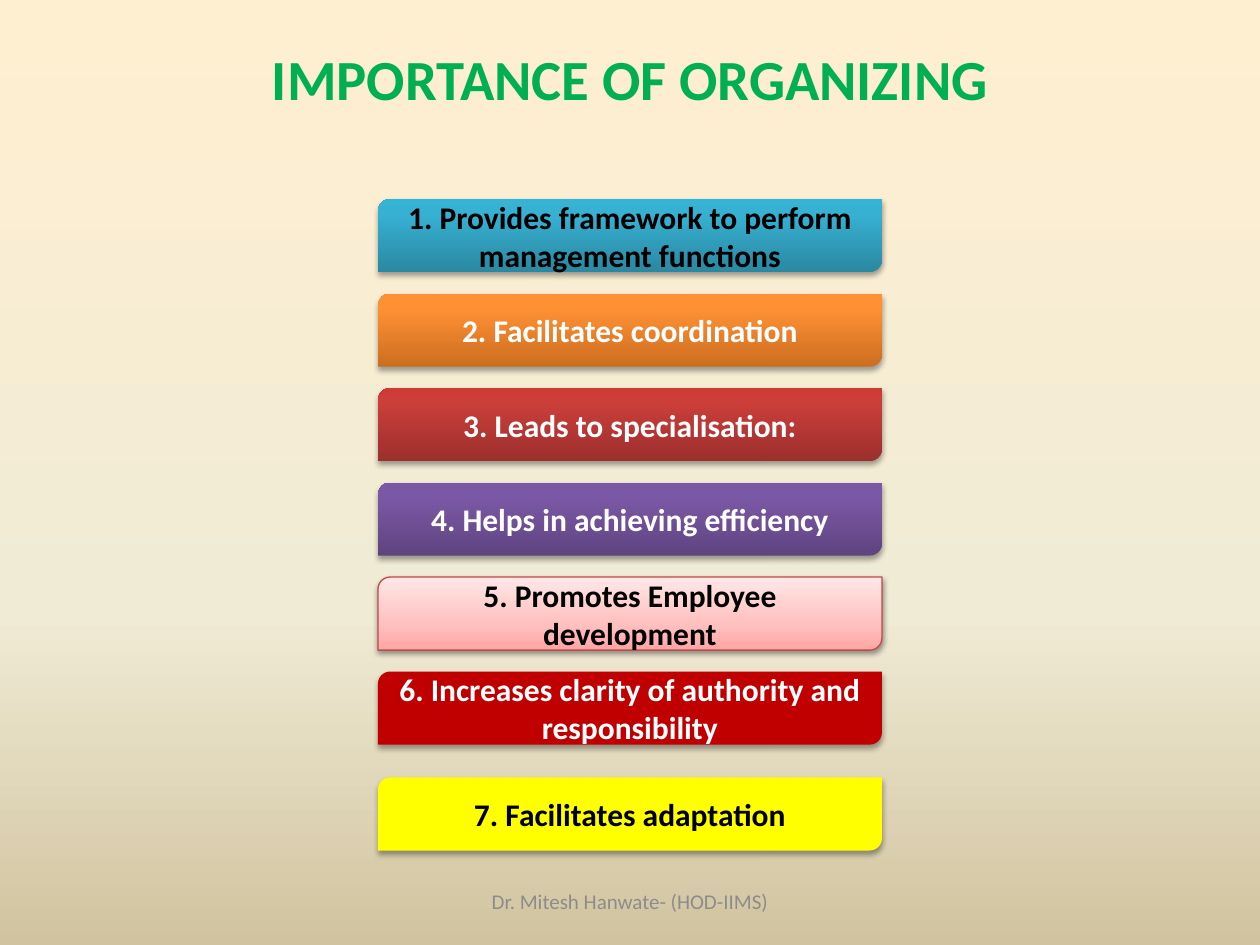
from pptx import Presentation
from pptx.dml.color import RGBColor
from pptx.enum.shapes import MSO_SHAPE
from pptx.enum.text import MSO_ANCHOR, PP_ALIGN
from pptx.oxml.ns import qn
from pptx.util import Inches, Pt
from lxml import etree

BAR = MSO_SHAPE.ROUND_2_DIAG_RECTANGLE
TOP, MIDDLE = MSO_ANCHOR.TOP, MSO_ANCHOR.MIDDLE
CENTER = PP_ALIGN.CENTER
UP, DOWN = 90, 270

BLACK = RGBColor(0x00, 0x00, 0x00)
WHITE = RGBColor(0xFF, 0xFF, 0xFF)
GREEN = RGBColor(0x00, 0xB0, 0x50)
GRAY = RGBColor(0x8C, 0x8C, 0x8C)
ROSE = RGBColor(0xBF, 0x4C, 0x48)
RED = RGBColor(0xC0, 0x00, 0x00)
YELLOW = RGBColor(0xFF, 0xFF, 0x00)

# Gradients: (percent, colour) stops
SAND = [(0, RGBColor(0xFF, 0xEF, 0xD1)), (65, RGBColor(0xF0, 0xEB, 0xD5)),
        (100, RGBColor(0xD1, 0xC3, 0x9F))]
TEAL = [(0, RGBColor(0x2A, 0x88, 0xA2)), (80, RGBColor(0x37, 0xB1, 0xD2)),
        (100, RGBColor(0x34, 0xB4, 0xD6))]
ORANGE = [(0, RGBColor(0xCC, 0x6E, 0x20)), (80, RGBColor(0xFF, 0x90, 0x34)),
          (100, RGBColor(0xFF, 0x91, 0x36))]
BRICK = [(0, RGBColor(0x9C, 0x2F, 0x2D)), (80, RGBColor(0xCB, 0x3E, 0x3A)),
         (100, RGBColor(0xCE, 0x3B, 0x37))]
PURPLE = [(0, RGBColor(0x5F, 0x44, 0x80)), (80, RGBColor(0x7B, 0x58, 0xA6)),
          (100, RGBColor(0x7C, 0x57, 0xA8))]
PINK = [(0, RGBColor(0xFF, 0xA6, 0xA5)), (35, RGBColor(0xFF, 0xC0, 0xBF)),
        (100, RGBColor(0xFF, 0xE7, 0xE7))]

TITLE = "IMPORTANCE OF ORGANIZING"
FOOTER = "Dr. Mitesh Hanwate- (HOD-IIMS)"
# text, fill, font colour, line colour
POINTS = [
    ("1. Provides framework to perform management functions", TEAL, BLACK, None),
    ("2. Facilitates coordination", ORANGE, WHITE, None),
    ("3. Leads to specialisation:", BRICK, WHITE, None),
    ("4. Helps in achieving efficiency", PURPLE, WHITE, None),
    ("5. Promotes Employee development", PINK, BLACK, ROSE),
    ("6. Increases clarity of authority and responsibility", RED, WHITE, None),
    ("7. Facilitates adaptation", YELLOW, BLACK, None),
]

WIDE, HIGH = 10, 7.5
BAR_W, BAR_H = 0.4 * WIDE, 0.58
FIRST, STEP = 1.58, HIGH / 10
LAST_GAP = 0.09  # extra space above the last bar


def write(shape, text, size, color, bold=False, anchor=MIDDLE):
    frame = shape.text_frame
    frame.word_wrap = True
    frame.vertical_anchor = anchor
    par = frame.paragraphs[0]
    par.alignment = CENTER
    run = par.add_run()
    run.text = text
    font = run.font
    font.name, font.size, font.bold = "Calibri", Pt(size), bold
    font.color.rgb = color


def shade(fill, root, stops, angle):
    """Fill with a gradient of any number of stops; root holds its XML."""
    fill.gradient()
    fill.gradient_angle = angle
    group = next(root.iter(qn("a:gsLst")))
    for old in list(group):
        group.remove(old)
    for share, color in stops:
        stop = etree.SubElement(group, qn("a:gs"), pos=str(share * 1000))
        etree.SubElement(stop, qn("a:srgbClr"), val=str(color))


def drop_shadow(shape, alpha, dist):
    shape.shadow.inherit = False
    effects = next(shape.element.iter(qn("a:effectLst")))
    outer = etree.SubElement(effects, qn("a:outerShdw"), blurRad=str(Pt(3.1)),
                             dist=str(Pt(dist)), dir="5400000", rotWithShape="0")
    color = etree.SubElement(outer, qn("a:srgbClr"), val=str(BLACK))
    etree.SubElement(color, qn("a:alpha"), val=str(alpha * 1000))


def add_bar(slide, top, text, fill, ink, edge):
    bar = slide.shapes.add_shape(BAR, Inches((WIDE - BAR_W) / 2), Inches(top),
                                 Inches(BAR_W), Inches(BAR_H))
    if isinstance(fill, list):
        shade(bar.fill, bar.element, fill, UP)
    else:
        bar.fill.solid()
        bar.fill.fore_color.rgb = fill
    if edge:
        bar.line.color.rgb = edge
        bar.line.width = Pt(0.75)
        drop_shadow(bar, 38, 1.6)
    else:
        bar.line.fill.background()
        drop_shadow(bar, 35, 1.8)
    write(bar, text, 18, ink, bold=True)


def add_text(slide, top, width, height, text, **style):
    """Add a text box centred across the slide."""
    box = slide.shapes.add_textbox(Inches((WIDE - width) / 2), Inches(top),
                                   Inches(width), Inches(height))
    write(box, text, **style)


def main():
    deck = Presentation()
    deck.slide_width, deck.slide_height = Inches(WIDE), Inches(HIGH)
    slide = deck.slides.add_slide(deck.slide_layouts[6])
    shade(slide.background.fill, slide.element, SAND, DOWN)

    add_text(slide, 0.3, 0.9 * WIDE, 1.25, TITLE,
             size=32.4, color=GREEN, bold=True, anchor=TOP)
    for row, point in enumerate(POINTS):
        gap = LAST_GAP if row == len(POINTS) - 1 else 0
        add_bar(slide, FIRST + row * STEP + gap, *point)
    add_text(slide, 6.95, 3.17, 0.4, FOOTER, size=12, color=GRAY)

    deck.save("out.pptx")


if __name__ == "__main__":
    main()
